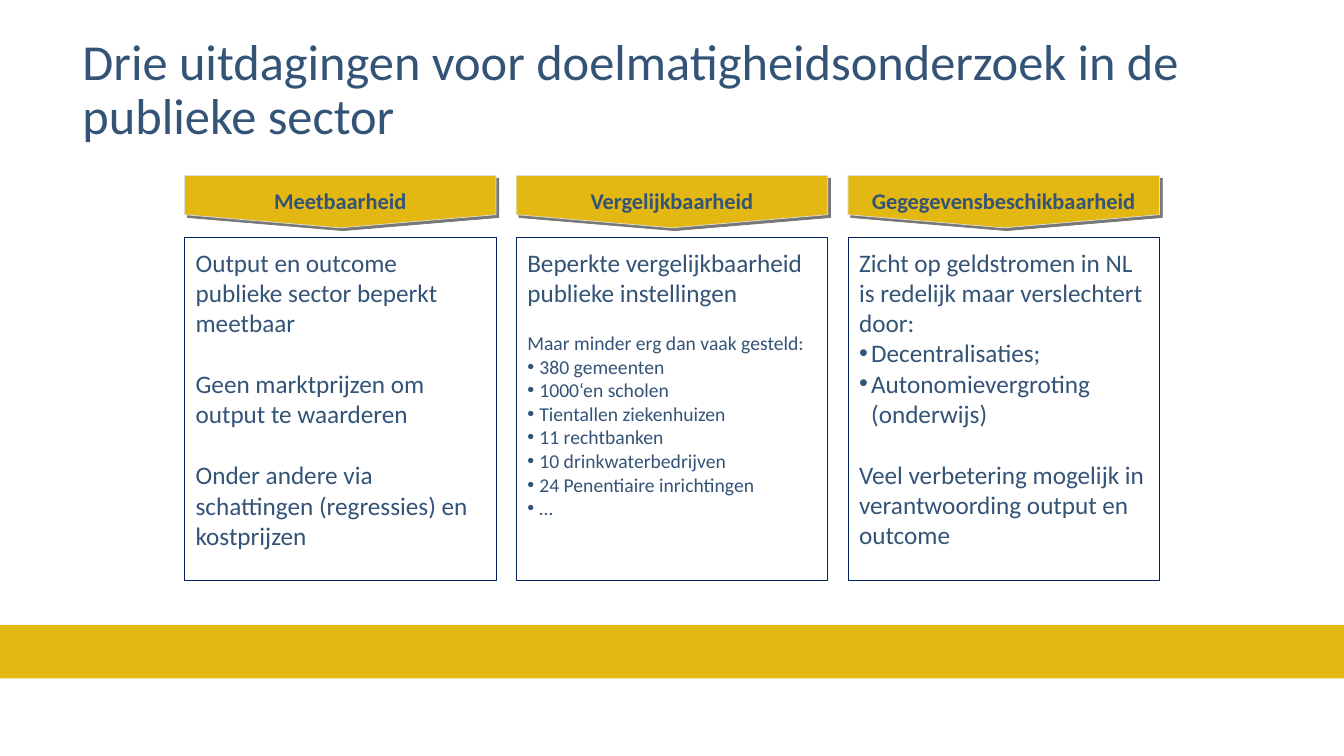
from lxml import etree
from pptx import Presentation
from pptx.dml.color import RGBColor
from pptx.enum.shapes import MSO_SHAPE
from pptx.enum.text import MSO_ANCHOR, PP_ALIGN
from pptx.oxml.ns import qn
from pptx.util import Inches, Pt

RECTANGLE, PENTAGON = MSO_SHAPE.RECTANGLE, MSO_SHAPE.PENTAGON
TOP, MIDDLE = MSO_ANCHOR.TOP, MSO_ANCHOR.MIDDLE
LEFT, CENTER = PP_ALIGN.LEFT, PP_ALIGN.CENTER

COLORS = {"gold": "E3B813", "text": "335377", "frame": "002060",
          "edge": "DDDDDD", "shadow": "777777"}
FONT = "Calibri"
SLIDE_W, SLIDE_H = 13.33, 7.5
COLUMN_LEFT, COLUMN_W, COLUMN_GAP = 1.83, 3.09, 0.2
HEADER_MID, HEADER_H = 2.0, 0.52
FRAME_TOP, FRAME_H = 2.36, 3.4
BODY_W, LABEL_W, LABEL_H = 2.89, 2.64, 0.27
BULLET_INDENT = Inches(0.12)

prs = Presentation()
prs.slide_width, prs.slide_height = Inches(SLIDE_W), Inches(SLIDE_H)
slide = prs.slides.add_slide(prs.slide_layouts[6])


def add_text(text, left, top, width, height, size=18, bold=False, align=LEFT,
             anchor=TOP, inset=(0, 0), spacing=1.0):
    frame = slide.shapes.add_textbox(
        Inches(left), Inches(top), Inches(width), Inches(height)).text_frame
    frame.word_wrap = True
    frame.vertical_anchor = anchor
    frame.margin_left = frame.margin_right = Inches(inset[0])
    frame.margin_top = frame.margin_bottom = Inches(inset[1])
    lines = [{"text": text}] if isinstance(text, str) else text
    for number, line in enumerate(lines):
        paragraph = frame.paragraphs[0] if number == 0 else frame.add_paragraph()
        paragraph.alignment = align
        paragraph.line_spacing = spacing
        if "gap" in line:
            paragraph.space_before = Pt(line["gap"])
        if line.get("bullet"):
            properties = paragraph._p.get_or_add_pPr()
            properties.set("marL", str(BULLET_INDENT))
            properties.set("indent", str(-BULLET_INDENT))
            etree.SubElement(properties, qn("a:buFont"), typeface="Arial")
            etree.SubElement(properties, qn("a:buChar"), char="•")
        run = paragraph.add_run()
        run.text = line["text"]
        run.font.name = FONT
        run.font.size = Pt(line.get("size", size))
        run.font.bold = bold
        run.font.color.rgb = RGBColor.from_string(COLORS["text"])


def add_block(kind, left, top, width, height, fill=None, line=None):
    block = slide.shapes.add_shape(
        kind, Inches(left), Inches(top), Inches(width), Inches(height))
    block.shadow.inherit = False
    if fill:
        block.fill.solid()
        block.fill.fore_color.rgb = RGBColor.from_string(COLORS[fill])
    else:
        block.fill.background()
    if line:
        block.line.color.rgb = RGBColor.from_string(COLORS[line])
        block.line.width = Pt(0.5)
    else:
        block.line.fill.background()
    return block


institutions = ["380 gemeenten", "1000‘en scholen", "Tientallen ziekenhuizen",
                "11 rechtbanken", "10 drinkwaterbedrijven",
                "24 Penentiaire inrichtingen", "…"]
challenges = [
    ("Meetbaarheid", [
        {"text": "Output en outcome publieke sector beperkt meetbaar"},
        {"text": "Geen marktprijzen om output te waarderen", "gap": 22},
        {"text": "Onder andere via schattingen (regressies) en kostprijzen", "gap": 22},
    ]),
    ("Vergelijkbaarheid", [
        {"text": "Beperkte vergelijkbaarheid publieke instellingen"},
        {"text": "Maar minder erg dan vaak gesteld:", "size": 14, "gap": 17},
        *({"text": name, "size": 14, "bullet": True} for name in institutions),
    ]),
    ("Gegegevensbeschikbaarheid", [
        {"text": "Zicht op geldstromen in NL is redelijk maar verslechtert door:"},
        {"text": "Decentralisaties;", "bullet": True},
        {"text": "Autonomievergroting (onderwijs)", "bullet": True},
        {"text": "Veel verbetering mogelijk in verantwoording output en outcome", "gap": 22},
    ]),
]

add_block(RECTANGLE, 0, 6.2, SLIDE_W, 0.53, fill="gold")
add_text("Drie uitdagingen voor doelmatigheidsonderzoek in de publieke sector",
         0.72, 0.18, 11.5, 1.45, size=36, anchor=MIDDLE, inset=(0.1, 0.05), spacing=0.9)

for column, (challenge, explanation) in enumerate(challenges):
    left = COLUMN_LEFT + column * (COLUMN_W + COLUMN_GAP)
    center = left + COLUMN_W / 2

    header = add_block(PENTAGON, center - HEADER_H / 2, HEADER_MID - COLUMN_W / 2,
                       HEADER_H, COLUMN_W, fill="gold", line="edge")
    header.rotation = 90
    header.adjustments[0] = 0.25
    effects = header._element.spPr.find(qn("a:effectLst"))
    shadow = etree.SubElement(effects, qn("a:outerShdw"), dist=str(Pt(2.8)),
                              dir="2700000", algn="ctr", rotWithShape="0")
    etree.SubElement(shadow, qn("a:srgbClr"), val=COLORS["shadow"])

    add_text(explanation, left + 0.11, FRAME_TOP + 0.09, BODY_W, FRAME_H - 0.18)
    add_text(challenge, center - LABEL_W / 2, 1.85, LABEL_W, LABEL_H,
             size=16, bold=True, align=CENTER, anchor=MIDDLE)
    add_block(RECTANGLE, left, FRAME_TOP, COLUMN_W, FRAME_H, line="frame")

prs.save("out.pptx")
